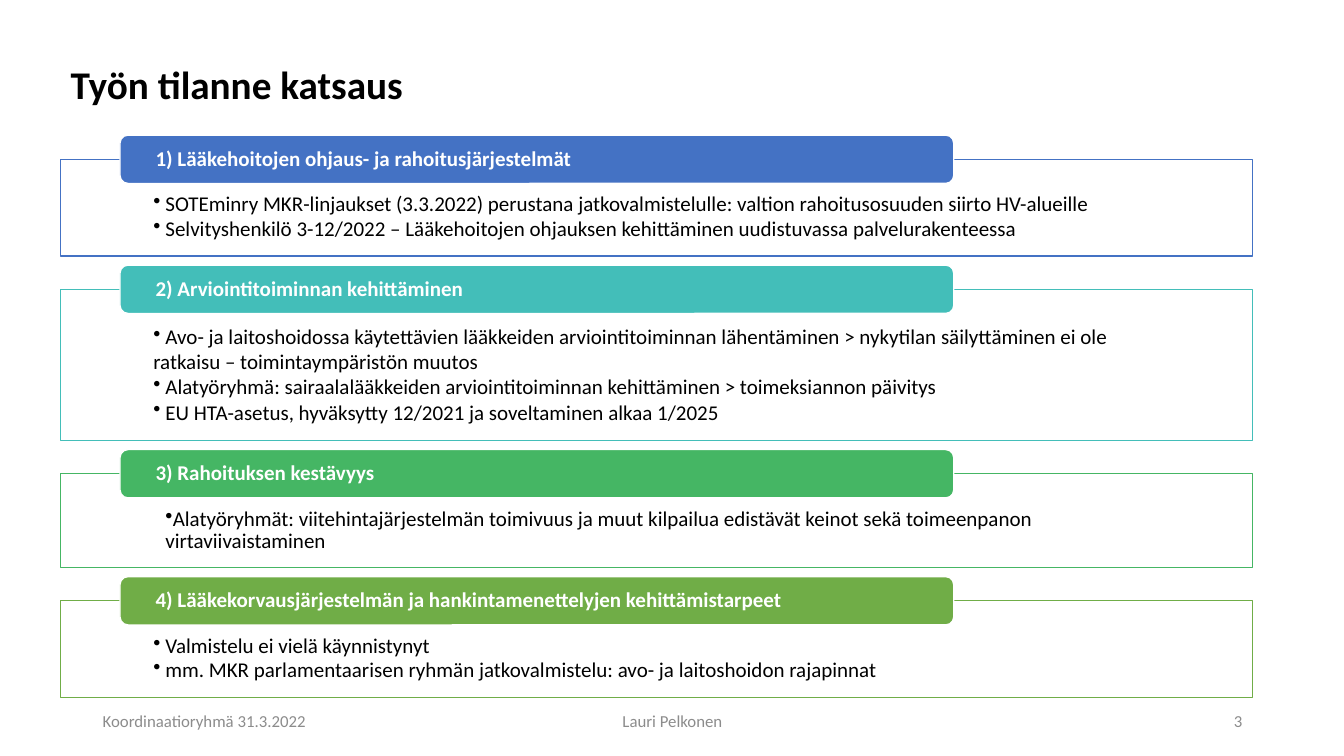
import dataclasses

import pptx
import pptx.dml.color
import pptx.enum.shapes
import pptx.enum.text
import pptx.oxml
import pptx.oxml.ns
import pptx.util

PX = 9144
ALIGN = pptx.enum.text.PP_ALIGN
ANCHOR = pptx.enum.text.MSO_ANCHOR
SHAPE = pptx.enum.shapes.MSO_SHAPE


@dataclasses.dataclass(frozen=True)
class Theme:
    font: str = "Calibri"
    ink: str = "000000"
    paper: str = "FFFFFF"
    muted: str = "8C8C8C"
    blue: str = "4472C4"
    teal: str = "43BEB9"
    green: str = "45B664"
    olive: str = "70AD47"
    title_size: int = 28
    body_size: int = 15
    footer_size: int = 12


@dataclasses.dataclass(frozen=True)
class Section:
    heading: str
    lines: tuple
    color: str
    top: int
    height: int
    margin: int = 12
    indent: int = -12
    level: int = 1
    spacing: float = 0.9
    after: float = 1.5


THEME = Theme()

SECTIONS = (
    Section(
        "1) Lääkehoitojen ohjaus- ja rahoitusjärjestelmät",
        (
            "SOTEminry MKR-linjaukset (3.3.2022) perustana jatkovalmistelulle: "
            "valtion rahoitusosuuden siirto HV-alueille",
            "Selvityshenkilö 3-12/2022 – Lääkehoitojen ohjauksen kehittäminen "
            "uudistuvassa palvelurakenteessa",
        ),
        THEME.blue, 158, 96,
    ),
    Section(
        "2) Arviointitoiminnan kehittäminen",
        (
            " Avo- ja laitoshoidossa käytettävien lääkkeiden arviointitoiminnan "
            "lähentäminen > nykytilan säilyttäminen ei ole ratkaisu – "
            "toimintaympäristön muutos",
            " Alatyöryhmä: sairaalalääkkeiden arviointitoiminnan kehittäminen > "
            "toimeksiannon päivitys",
            " EU HTA-asetus, hyväksytty 12/2021 ja soveltaminen alkaa 1/2025",
        ),
        THEME.teal, 287, 150, margin=0, indent=0, level=0, spacing=1.0, after=0,
    ),
    Section(
        "3) Rahoituksen kestävyys",
        (
            "Alatyöryhmät: viitehintajärjestelmän toimivuus ja muut kilpailua "
            "edistävät keinot sekä toimeenpanon virtaviivaistaminen",
        ),
        THEME.green, 470, 93, indent=0,
    ),
    Section(
        "4) Lääkekorvausjärjestelmän ja hankintamenettelyjen kehittämistarpeet",
        (
            "Valmistelu ei vielä käynnistynyt",
            "mm. MKR parlamentaarisen ryhmän jatkovalmistelu: avo- ja "
            "laitoshoidon rajapinnat",
        ),
        THEME.olive, 596, 96,
    ),
)

FOOTERS = (
    ("Koordinaatioryhmä 31.3.2022", 92, 300, ALIGN.LEFT),
    ("Lauri Pelkonen", 442, 450, ALIGN.CENTER),
    ("3", 942, 300, ALIGN.RIGHT),
)


def rgb(color):
    return pptx.dml.color.RGBColor.from_string(color)


def px(*lengths):
    return [pptx.util.Emu(length * PX) for length in lengths]


def set_frame(frame, insets=(10, 5, 10, 5), anchor=ANCHOR.MIDDLE):
    frame.word_wrap = True
    frame.auto_size = pptx.enum.text.MSO_AUTO_SIZE.NONE
    frame.vertical_anchor = anchor
    (frame.margin_left, frame.margin_top,
     frame.margin_right, frame.margin_bottom) = px(*insets)


def write(para, text, size=THEME.body_size, color=THEME.ink, bold=False,
          align=ALIGN.LEFT, spacing=1.0, after=0, level=0):
    para.alignment = align
    para.line_spacing = spacing
    para.space_before = pptx.util.Pt(0)
    para.space_after = pptx.util.Pt(after)
    para.level = level
    span = para.add_run()
    span.text = text
    span.font.name = THEME.font
    span.font.size = pptx.util.Pt(size)
    span.font.bold = bold
    span.font.color.rgb = rgb(color)


def set_bullet(para, margin, indent):
    properties = para._p.get_or_add_pPr()
    properties.set("marL", str(margin * PX))
    properties.set("indent", str(indent * PX))
    properties.append(pptx.oxml.parse_xml(
        f'<a:buChar {pptx.oxml.ns.nsdecls("a")} char="•"/>'))


def add_box(page, kind, place, fill, line):
    box = page.shapes.add_shape(kind, *px(*place))
    box.shadow.inherit = False
    box.fill.solid()
    box.fill.fore_color.rgb = rgb(fill)
    box.line.color.rgb = rgb(line)
    box.line.width = pptx.util.Pt(1)
    return box


def add_title(page, text):
    title = page.shapes.title
    title.left, title.top, title.width, title.height = px(60, 40, 1059, 93)
    set_frame(title.text_frame)
    write(title.text_frame.paragraphs[0], text, size=THEME.title_size,
          bold=True, spacing=0.9)


def add_section(page, section):
    body = add_box(page, SHAPE.RECTANGLE, (60, section.top, 1182, section.height),
                   THEME.paper, section.color)
    frame = body.text_frame
    set_frame(frame, (92, 34, 92, 12), ANCHOR.TOP)
    for index, line in enumerate(section.lines):
        para = frame.add_paragraph() if index else frame.paragraphs[0]
        write(para, line, spacing=section.spacing, after=section.after,
              level=section.level)
        set_bullet(para, section.margin, section.indent)

    heading = add_box(page, SHAPE.ROUNDED_RECTANGLE,
                      (119, section.top - 24, 827, 48), section.color, THEME.paper)
    set_frame(heading.text_frame, (33, 0, 33, 0))
    write(heading.text_frame.paragraphs[0], section.heading, color=THEME.paper,
          bold=True, spacing=0.9)


def add_footer(page, text, left, width, align):
    box = page.shapes.add_textbox(*px(left, 695, width, 40))
    set_frame(box.text_frame)
    write(box.text_frame.paragraphs[0], text, size=THEME.footer_size,
          color=THEME.muted, align=align)


def main():
    deck = pptx.Presentation()
    deck.slide_width, deck.slide_height = px(1333, 750)
    page = deck.slides.add_slide(deck.slide_layouts[5])
    add_title(page, "Työn tilanne katsaus")
    for section in SECTIONS:
        add_section(page, section)
    for footer in FOOTERS:
        add_footer(page, *footer)
    deck.save("out.pptx")


if __name__ == "__main__":
    main()
